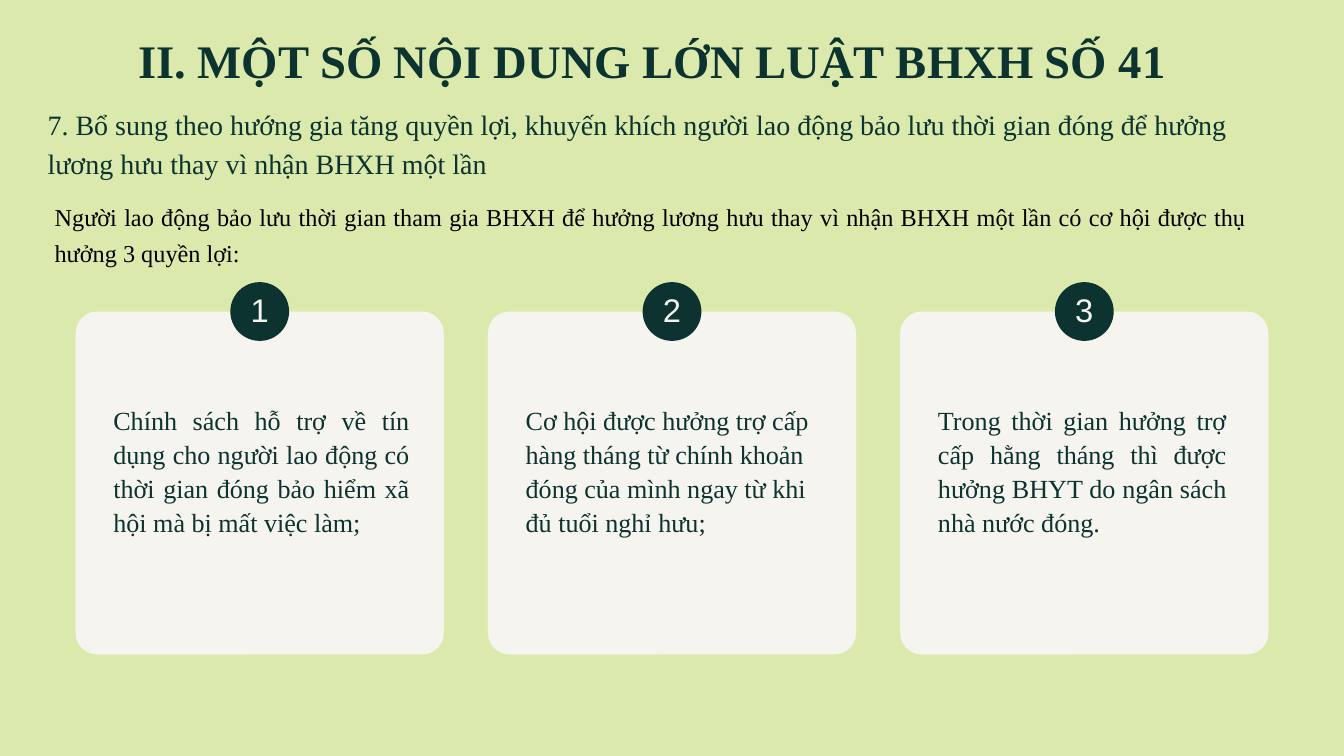
from pptx import Presentation
from pptx import util as u
from pptx.dml.color import RGBColor
from pptx.enum import shapes, text

PX = 9525  # EMU per px, slide of 1920 x 1080
GREEN, CREAM, LIME, BLACK = "0D3330", "F6F4EE", "DBEAAC", "000000"
SERIF = "Times New Roman"
LEFT, CENTER, JUSTIFY = text.PP_ALIGN.LEFT, text.PP_ALIGN.CENTER, text.PP_ALIGN.JUSTIFY


def paint(fill, color):
    fill.solid()
    fill.fore_color.rgb = RGBColor.from_string(color)


def write(sp, words, size, line, font=SERIF, color=GREEN, align=LEFT, bold=False,
          anchor=text.MSO_ANCHOR.TOP, bottom=0):
    tf = sp.text_frame
    tf.word_wrap = True
    tf.auto_size = text.MSO_AUTO_SIZE.NONE
    tf.vertical_anchor = anchor
    tf.margin_left = tf.margin_top = tf.margin_right = 0
    tf.margin_bottom = bottom * PX
    p = tf.paragraphs[0]
    p.alignment = align
    p.line_spacing = u.Pt(line)
    p.space_before = u.Pt(0)
    r = p.add_run()
    r.text = words
    r.font.name, r.font.size, r.font.bold = font, u.Pt(size), bold
    r.font.color.rgb = RGBColor.from_string(color)


prs = Presentation()
prs.slide_width, prs.slide_height = 1920 * PX, 1080 * PX
s = prs.slides.add_slide(prs.slide_layouts[5])
paint(s.background.fill, LIME)

# Heading
title = s.shapes.title
title.left, title.top, title.width, title.height = [v * PX for v in (80, 42, 1704, 79)]
write(title, "II. MỘT SỐ NỘI DUNG LỚN LUẬT BHXH SỐ 41", 50, 62.4, align=CENTER, bold=True)

subtitle = s.shapes.add_textbox(*[v * PX for v in (68, 146, 1743, 108)])
write(subtitle, "7. Bổ sung theo hướng gia tăng quyền lợi, khuyến khích người lao động bảo lưu "
      "thời gian đóng để hưởng lương hưu thay vì nhận BHXH một lần", 30, 42)

intro = s.shapes.add_textbox(*[v * PX for v in (78, 278, 1704, 100)])
write(intro, "Người lao động bảo lưu thời gian tham gia BHXH để hưởng lương hưu thay vì nhận "
      "BHXH một lần có cơ hội được thụ hưởng 3 quyền lợi:", 26, 39, color=BLACK, align=JUSTIFY)

# Three benefit cards, each with a numbered badge centred on its top edge
CARD_TOP, CARD_W, CARD_H, RADIUS, PITCH, BADGE = 445, 526, 490, 31, 589, 84
benefits = [
    ("Chính sách hỗ trợ về tín dụng cho người lao động có thời gian đóng bảo hiểm xã hội "
     "mà bị mất việc làm;", JUSTIFY, 423),
    ("Cơ hội được hưởng trợ cấp hàng tháng từ chính khoản đóng của mình ngay từ khi đủ tuổi "
     "nghỉ hưu;", LEFT, 423),
    ("Trong thời gian hưởng trợ cấp hằng tháng thì được hưởng BHYT do ngân sách nhà nước "
     "đóng.", JUSTIFY, 412),
]
for i, (words, align, width) in enumerate(benefits):
    middle = 960 + (i - 1) * PITCH
    card = s.shapes.add_shape(shapes.MSO_SHAPE.ROUNDED_RECTANGLE, (middle - CARD_W // 2) * PX,
                              CARD_TOP * PX, CARD_W * PX, CARD_H * PX)
    card.adjustments[0] = RADIUS / CARD_H
    badge = s.shapes.add_shape(shapes.MSO_SHAPE.OVAL, (middle - BADGE // 2) * PX,
                               (CARD_TOP - BADGE // 2) * PX, BADGE * PX, BADGE * PX)
    for sp, color in ((card, CREAM), (badge, GREEN)):
        paint(sp.fill, color)
        sp.line.fill.background()
        sp.shadow.inherit = False
    write(badge, str(i + 1), 35, 42, font="Arial", color=CREAM, align=CENTER,
          anchor=text.MSO_ANCHOR.MIDDLE, bottom=6)
    benefit = s.shapes.add_textbox((middle - 209) * PX, 574 * PX, width * PX, 191 * PX)
    write(benefit, words, 28, 36.4, align=align)

prs.save("out.pptx")
